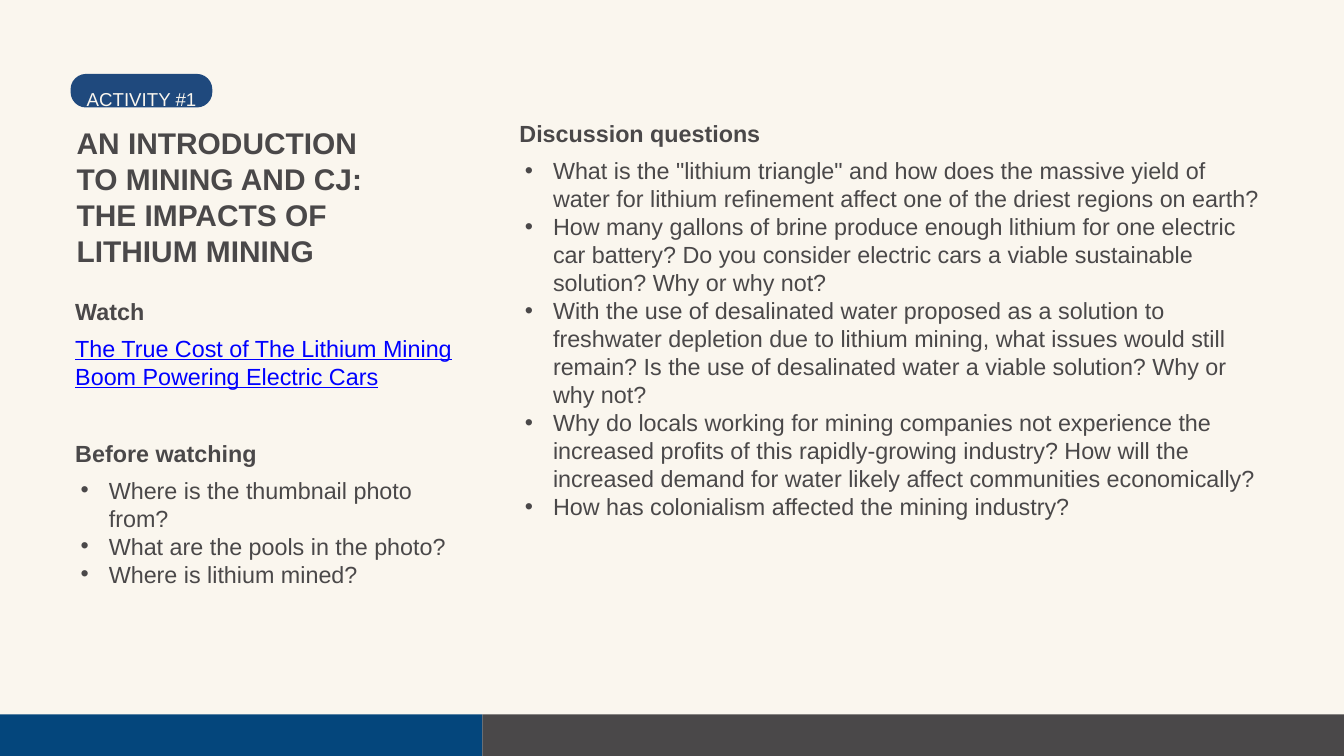
import pptx
import pptx.util
from pptx.dml.color import RGBColor
from pptx.enum.shapes import MSO_SHAPE
from pptx.oxml.ns import qn
from lxml import etree

PX = 9144  # EMU per px, 100 px to the inch
SLIDE_WIDTH, SLIDE_HEIGHT = 2000, 1125
BAR_TOP, BAR_SPLIT = 1063, 718
HEADING_HEIGHT, BODY_OFFSET = 42, 55
BULLET_MARGIN, BULLET_HANG = 50, 42

THEME = {
    "font": "Arial",
    "paper": "FAF6EE",
    "ink": "4A4849",
    "bar": "04467C",
    "badge": "1F497D",
    "link": "0000FF",
    "title": (32, 38.6),  # type size, line height in points
    "body": (25, 30),
    "label": (20, 1.4),  # type size, line height as a multiple
}

LABEL = "ACTIVITY #1"
TITLE = "AN INTRODUCTION TO MINING AND CJ: THE IMPACTS OF LITHIUM MINING"

# heading, left, top, width, body height, style of the body, body paragraphs
SECTIONS = [
    ("Watch", 112, 442, 566, 84, "link", [
        "The True Cost of The Lithium Mining Boom Powering Electric Cars",
    ]),
    ("Before watching", 112, 653, 566, 168, "bullets", [
        "Where is the thumbnail photo from?",
        "What are the pools in the photo?",
        "Where is lithium mined?",
    ]),
    ("Discussion questions", 773, 178, 1115, 547, "bullets", [
        'What is the "lithium triangle" and how does the massive yield of water '
        "for lithium refinement affect one of the driest regions on earth?",
        "How many gallons of brine produce enough lithium for one electric car "
        "battery? Do you consider electric cars a viable sustainable solution? "
        "Why or why not?",
        "With the use of desalinated water proposed as a solution to freshwater "
        "depletion due to lithium mining, what issues would still remain? Is the "
        "use of desalinated water a viable solution? Why or why not?",
        "Why do locals working for mining companies not experience the increased "
        "profits of this rapidly-growing industry? How will the increased demand "
        "for water likely affect communities economically?",
        "How has colonialism affected the mining industry?",
    ]),
]


def color(name):
    return RGBColor.from_string(THEME[name])


def emu(*lengths):
    return [length * PX for length in lengths]


def add_block(page, kind, place, fill):
    block = page.shapes.add_shape(kind, *emu(*place))
    block.shadow.inherit = False
    block.fill.solid()
    block.fill.fore_color.rgb = color(fill)
    block.line.fill.background()
    return block


def add_bullet(para):
    properties = para._p.get_or_add_pPr()
    properties.set("marL", str(BULLET_MARGIN * PX))
    properties.set("indent", str(-BULLET_HANG * PX))
    bullet_color = etree.SubElement(properties, qn("a:buClr"))
    etree.SubElement(bullet_color, qn("a:srgbClr"), val=THEME["ink"])
    etree.SubElement(properties, qn("a:buFont"), typeface=THEME["font"])
    etree.SubElement(properties, qn("a:buChar"), char="•")


def add_text(page, place, texts, style="body", ink="ink",
             bold=False, underline=False, bullets=False):
    box = page.shapes.add_textbox(*emu(*place))
    frame = box.text_frame
    frame.word_wrap = True
    frame.margin_left = frame.margin_right = 0
    frame.margin_top = frame.margin_bottom = 0
    size, spacing = THEME[style]
    for index, text in enumerate(texts):
        para = frame.add_paragraph() if index else frame.paragraphs[0]
        if bullets:
            add_bullet(para)
        para.line_spacing = spacing if style == "label" else pptx.util.Pt(spacing)
        span = para.add_run()
        span.text = text
        span.font.name = THEME["font"]
        span.font.size = pptx.util.Pt(size)
        span.font.color.rgb = color(ink)
        span.font.bold = bold
        span.font.underline = underline


def add_section(page, heading, left, top, width, height, style, texts):
    add_text(page, (left, top, width, HEADING_HEIGHT), [heading], bold=True)
    is_link = style == "link"
    add_text(page, (left, top + BODY_OFFSET, width, height), texts,
             ink="link" if is_link else "ink",
             underline=is_link, bullets=style == "bullets")


def main():
    deck = pptx.Presentation()
    deck.slide_width, deck.slide_height = emu(SLIDE_WIDTH, SLIDE_HEIGHT)
    page = deck.slides.add_slide(deck.slide_layouts[6])
    page.background.fill.solid()
    page.background.fill.fore_color.rgb = color("paper")

    for left, right, fill in [(0, BAR_SPLIT, "bar"), (BAR_SPLIT, SLIDE_WIDTH, "ink")]:
        place = (left, BAR_TOP, right - left, SLIDE_HEIGHT - BAR_TOP)
        add_block(page, MSO_SHAPE.RECTANGLE, place, fill)

    add_text(page, (114, 185, 465, 215), [TITLE], "title", bold=True)
    for section in SECTIONS:
        add_section(page, *section)

    badge = add_block(page, MSO_SHAPE.ROUNDED_RECTANGLE, (105, 110, 211, 50), "badge")
    badge.adjustments[0] = 0.46
    add_text(page, (129, 118, 933, 34), [LABEL], "label", ink="paper")

    deck.save("out.pptx")


if __name__ == "__main__":
    main()
